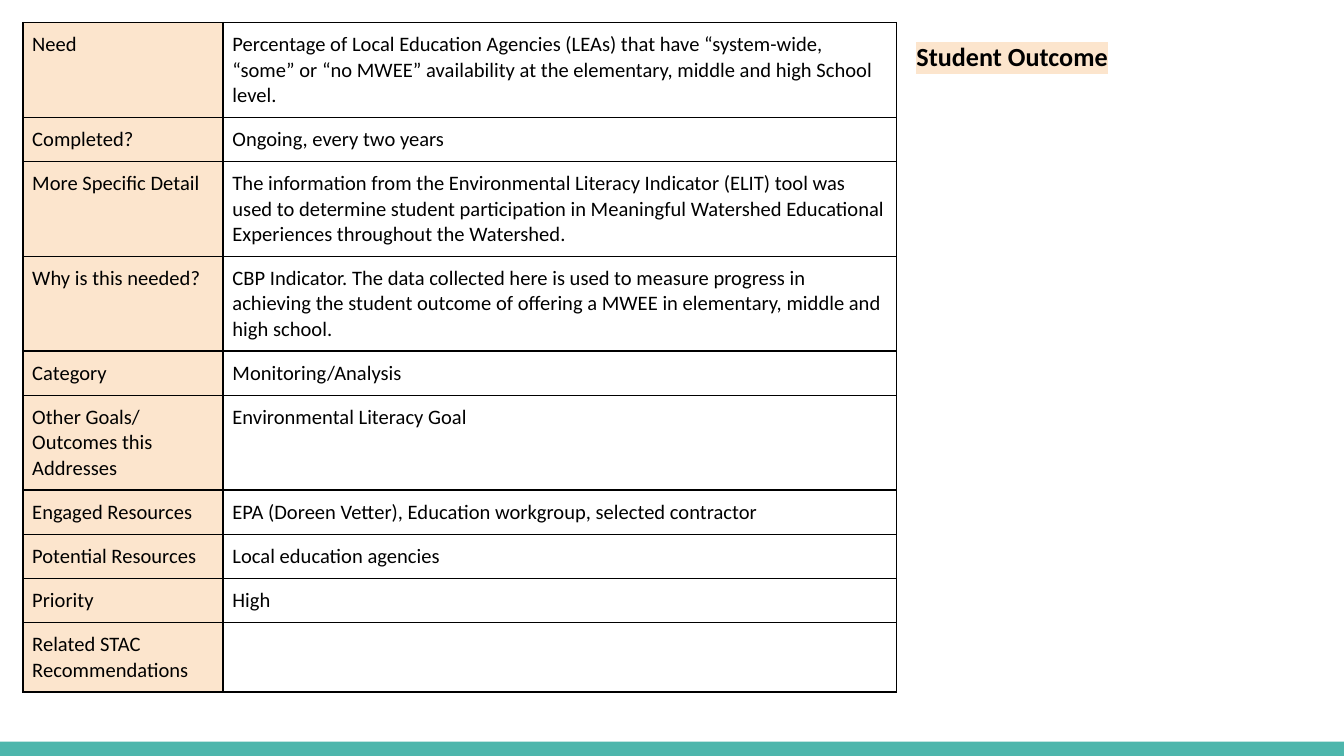
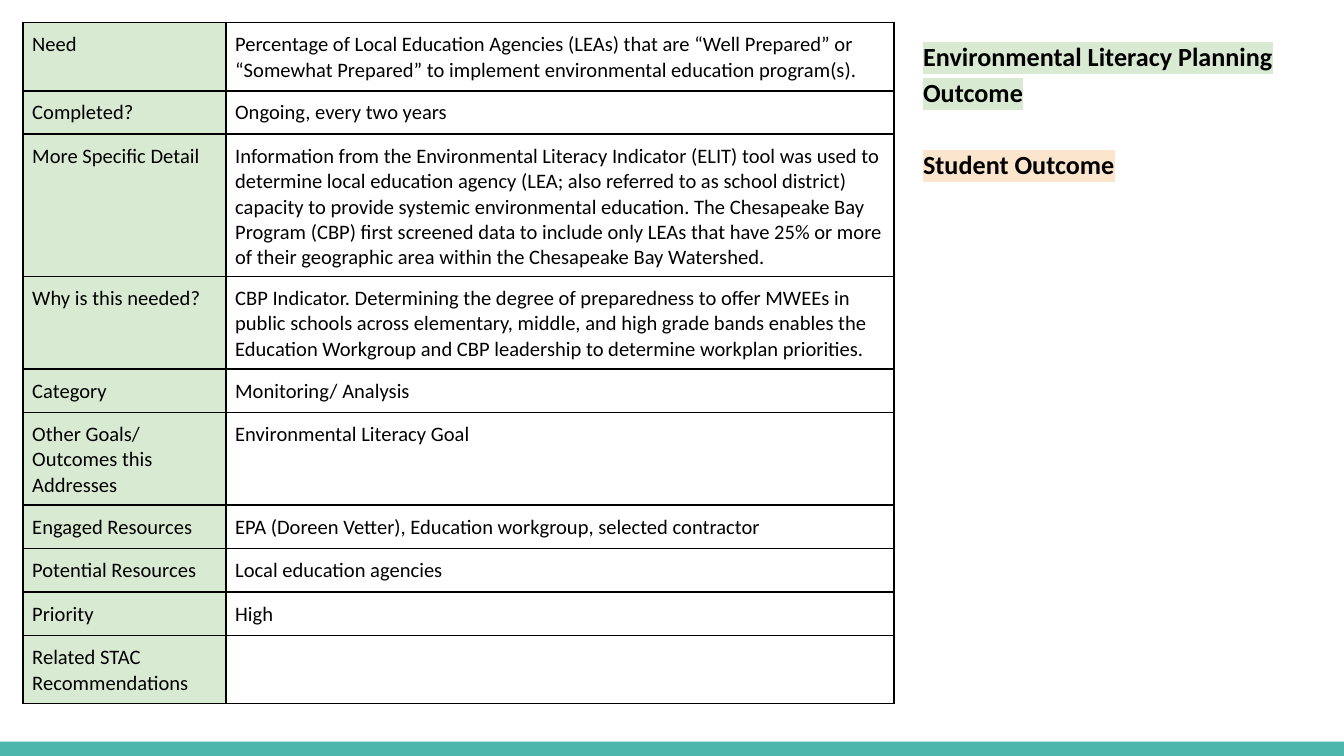
from lxml.etree import SubElement
from pptx import Presentation
from pptx.dml.color import RGBColor
from pptx.enum.shapes import MSO_SHAPE
from pptx.oxml.ns import qn
from pptx.util import Inches, Pt

SLIDE_WIDTH = Inches(10)
SLIDE_HEIGHT = SLIDE_WIDTH * 9 // 16
FONT = "Calibri"
BLACK, TEAL, PEACH, GREEN = "000000", "4DB6AC", "FCE5CD", "D9EAD3"
BODY_SIZE, HEADING_SIZE = 11, 14
LINE_SPACING = 1.15
OUTCOME_GAP = 19.3

LABELS = [
    "Need",
    "Completed?",
    "More Specific Detail",
    "Why is this needed?",
    "Category",
    "Other Goals/ Outcomes this Addresses",
    "Engaged Resources",
    "Potential Resources",
    "Priority",
    "Related STAC Recommendations",
]
SHARED_ANSWERS = [
    "Environmental Literacy Goal",
    "EPA (Doreen Vetter), Education workgroup, selected contractor",
    "Local education agencies",
    "High",
    "",
]
NEEDS = [
    {
        "fill": PEACH,
        "columns": (14.9, 50.1),
        "outcome_left": 67.2,
        "outcomes": [("Student Outcome", PEACH)],
        "answers": [
            "Percentage of Local Education Agencies (LEAs) that have “system-wide, “some” or "
            "“no MWEE” availability at the elementary, middle and high School level.",
            "Ongoing, every two years",
            "The information from the Environmental Literacy Indicator (ELIT) tool was used to "
            "determine student participation in Meaningful Watershed Educational Experiences "
            "throughout the Watershed.",
            "CBP Indicator. The data collected here is used to measure progress in achieving the "
            "student outcome of offering a MWEE in elementary, middle and high school.",
            "Monitoring/Analysis",
        ],
    },
    {
        "fill": GREEN,
        "columns": (15.1, 49.7),
        "outcome_left": 67.7,
        "outcomes": [
            ("Environmental Literacy Planning Outcome", GREEN),
            ("Student Outcome", PEACH),
        ],
        "answers": [
            "Percentage of Local Education Agencies (LEAs) that are “Well Prepared” or “Somewhat "
            "Prepared” to implement environmental education program(s).",
            "Ongoing, every two years",
            "Information from the Environmental Literacy Indicator (ELIT) tool was used to "
            "determine local education agency (LEA; also referred to as school district) capacity "
            "to provide systemic environmental education. The Chesapeake Bay Program (CBP) first "
            "screened data to include only LEAs that have 25% or more of their geographic area "
            "within the Chesapeake Bay Watershed.",
            "CBP Indicator. Determining the degree of preparedness to offer MWEEs in public "
            "schools across elementary, middle, and high grade bands enables the Education "
            "Workgroup and CBP leadership to determine workplan priorities.",
            "Monitoring/ Analysis",
        ],
    },
]


def across(percent):
    """Return a percentage of the slide's width."""
    return round(SLIDE_WIDTH * percent / 100)


def down(percent):
    """Return a percentage of the slide's height."""
    return round(SLIDE_HEIGHT * percent / 100)


def paint(color_format, color):
    """Set a fill's or font's colour from a hex string."""
    color_format.rgb = RGBColor.from_string(color)


def format_runs(paragraph, size, bold=False):
    """Give every run of a paragraph the deck's font."""
    for run in paragraph.runs:
        run.font.size = Pt(size)
        run.font.bold = bold
        paint(run.font.color, BLACK)
        run.font.name = FONT


def highlight(run, color):
    """Mark a run's background with a colour."""
    properties = run.font._element
    mark = SubElement(properties, qn("a:highlight"))
    SubElement(mark, qn("a:srgbClr"), val=color)
    properties.find(qn("a:solidFill")).addnext(mark)


def add_band(slide):
    """Draw the band along the bottom edge."""
    height = down(1.9)
    band = slide.shapes.add_shape(
        MSO_SHAPE.RECTANGLE, 0, SLIDE_HEIGHT - height, SLIDE_WIDTH, height
    )
    band.shadow.inherit = False
    band.fill.solid()
    paint(band.fill.fore_color, TEAL)
    band.line.fill.background()


def add_borders(cell):
    """Put a thin black line on each side of a cell."""
    properties = cell._tc.get_or_add_tcPr()
    for position, side in enumerate(("a:lnL", "a:lnR", "a:lnT", "a:lnB")):
        line = SubElement(properties, qn(side), w=str(Pt(1)))
        fill = SubElement(line, qn("a:solidFill"))
        SubElement(fill, qn("a:srgbClr"), val=BLACK)
        properties.insert(position, line)


def fill_cell(cell, text, color=None):
    """Write a cell's text and set its fill, margins and borders."""
    cell.text_frame.text = text
    format_runs(cell.text_frame.paragraphs[0], BODY_SIZE)
    cell.margin_left = cell.margin_right = across(0.7)
    cell.margin_top = cell.margin_bottom = across(0.7)
    if color:
        cell.fill.solid()
        paint(cell.fill.fore_color, color)
    else:
        cell.fill.background()
    add_borders(cell)


def add_need_table(slide, need):
    """Add the two-column table, whose rows grow to fit their text."""
    answers = need["answers"] + SHARED_ANSWERS
    widths = [across(share) for share in need["columns"]]
    table = slide.shapes.add_table(
        len(LABELS), len(widths), across(1.7), down(3), sum(widths), down(2)
    ).table
    table.first_row = table.horz_banding = False
    for column, width in zip(table.columns, widths):
        column.width = width
    for row, label, answer in zip(table.rows, LABELS, answers):
        fill_cell(row.cells[0], label, need["fill"])
        fill_cell(row.cells[1], answer)


def add_outcomes(slide, need):
    """List the highlighted outcomes beside the table."""
    left = across(need["outcome_left"])
    box = slide.shapes.add_textbox(left, down(3), SLIDE_WIDTH - left, down(58.3))
    frame = box.text_frame
    frame.word_wrap = True
    frame.margin_left = frame.margin_right = across(1)
    frame.margin_top = frame.margin_bottom = across(1)
    frame.text = "\n".join(text for text, color in need["outcomes"])
    for index, (text, color) in enumerate(need["outcomes"]):
        paragraph = frame.paragraphs[index]
        paragraph.line_spacing = LINE_SPACING
        paragraph.space_before = Pt(OUTCOME_GAP if index else 0)
        format_runs(paragraph, HEADING_SIZE, bold=True)
        highlight(paragraph.runs[0], color)


def main():
    """Build one slide for each need and save the deck."""
    presentation = Presentation()
    presentation.slide_width = SLIDE_WIDTH
    presentation.slide_height = SLIDE_HEIGHT
    for need in NEEDS:
        slide = presentation.slides.add_slide(presentation.slide_layouts[6])
        add_band(slide)
        add_need_table(slide, need)
        add_outcomes(slide, need)
    presentation.save("out.pptx")


if __name__ == "__main__":
    main()
